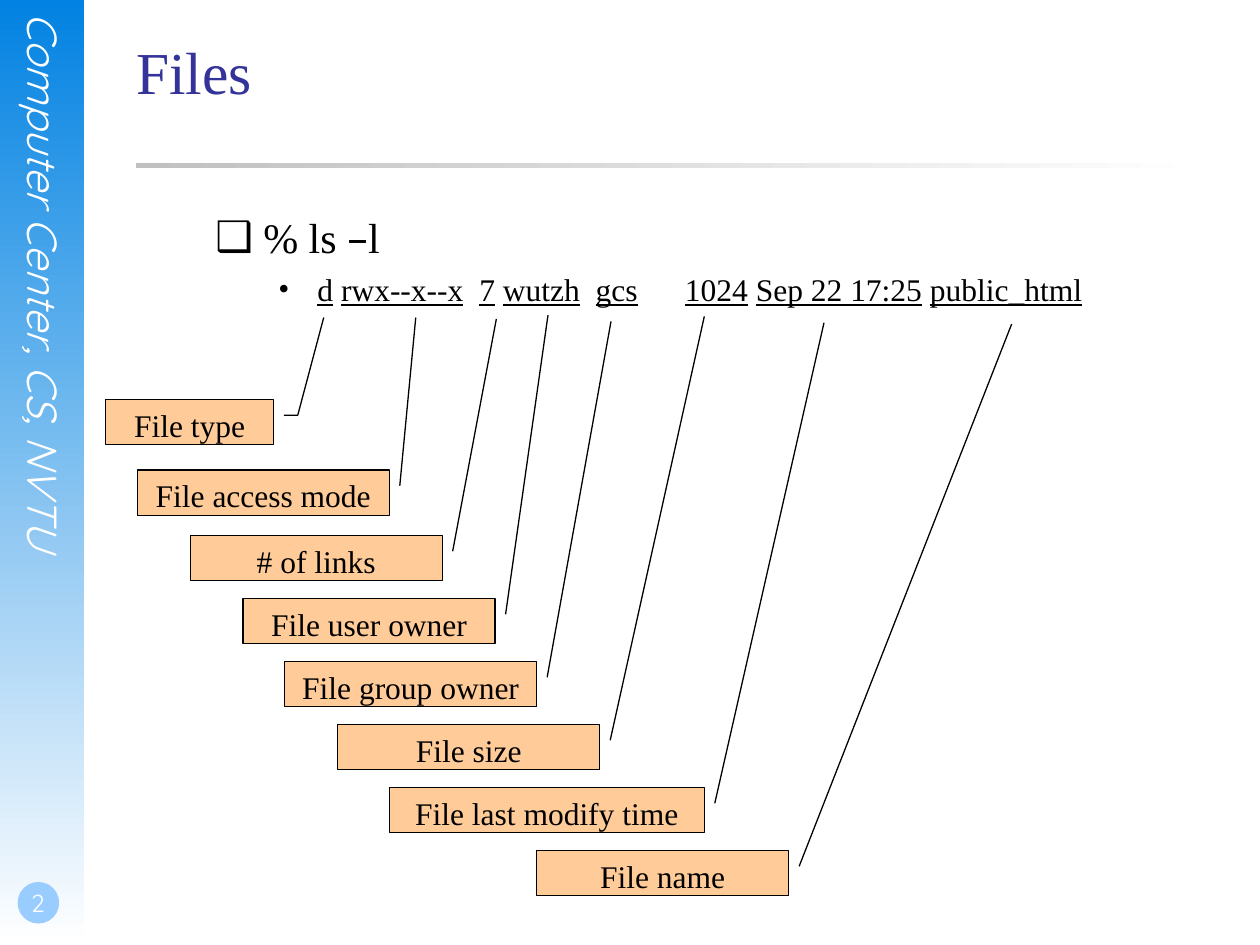
from pptx import Presentation
from pptx.dml.color import RGBColor
from pptx.enum.shapes import MSO_SHAPE
from pptx.enum.text import MSO_ANCHOR, PP_ALIGN
from pptx.oxml.ns import qn
from pptx.util import Inches, Pt
from lxml import etree

SERIF, SANS, SYMBOL = "Times New Roman", "Quicksand", "DejaVu Sans"
BLACK, WHITE = "000000", "FFFFFF"
SPACE_WIDTH = 4.5  # points, one space of the serif font at 18 pt

# Text of each field and the number of spaces that follow it
LISTING = [("d", 1), ("rwx--x--x", 2), ("7", 1), ("wutzh", 2), ("gcs", 6),
           ("1024", 1), ("Sep 22 17:25", 1), ("public_html", 0)]

# Label, left, top, width, then the x and y of the tip of its line
CALLOUTS = [
    ("File type", 0.84, 3.17, 1.33, 2.57, 2.52),
    ("File access mode", 1.09, 3.73, 2, 3.3, 2.52),
    ("# of links", 1.51, 4.25, 2, 3.94, 2.53),
    ("File user owner", 1.93, 4.75, 2, 4.35, 2.5),
    ("File group owner", 2.26, 5.25, 2, 4.85, 2.55),
    ("File size", 2.68, 5.75, 2.08, 5.59, 2.51),
    ("File last modify time", 3.09, 6.25, 2.5, 6.54, 2.56),
    ("File name", 4.26, 6.75, 2, 8.03, 2.57),
]


def color(value):
    return RGBColor.from_string(value)


def inches(*lengths):
    return [Inches(length) for length in lengths]


def add_run(paragraph, text, size=18, font=SERIF, fill=BLACK,
            italic=None, underline=None):
    run = paragraph.add_run()
    run.text = text
    run.font.size = Pt(size)
    run.font.name = font
    run.font.color.rgb = color(fill)
    run.font.italic = italic
    run.font.underline = underline
    return run


def set_frame(frame, insets=(0, 0, 0, 0), anchor=MSO_ANCHOR.TOP):
    frame.word_wrap = True
    frame.vertical_anchor = anchor
    (frame.margin_left, frame.margin_top,
     frame.margin_right, frame.margin_bottom) = inches(*insets)


def add_text_box(slide, box, **frame_format):
    frame = slide.shapes.add_textbox(*inches(*box)).text_frame
    set_frame(frame, **frame_format)
    return frame


def add_block(slide, kind, box, fill):
    """Add a shape without outline; a pair of colours gives a gradient."""
    shape = slide.shapes.add_shape(kind, *inches(*box))
    shape.shadow.inherit = False
    shape.line.fill.background()
    if isinstance(fill, str):
        shape.fill.solid()
        shape.fill.fore_color.rgb = color(fill)
    else:
        shape.fill.gradient()
        for stop, value in zip(shape.fill.gradient_stops, fill):
            stop.color.rgb = color(value)
    return shape


def set_bullet(paragraph, character, font, left, hanging):
    properties = paragraph._p.get_or_add_pPr()
    properties.set("marL", str(Inches(left)))
    properties.set("indent", str(-Inches(hanging)))
    etree.SubElement(properties, qn("a:buFont")).set("typeface", font)
    etree.SubElement(properties, qn("a:buChar")).set("char", character)


def add_sidebar(slide, left, top, width, height):
    band = add_block(slide, MSO_SHAPE.RECTANGLE, (left, top, width, height),
                     ("0282E2", WHITE))
    band.fill.gradient_angle = 270
    name = add_text_box(slide, (left + 0.15, top + 0.1, 0.4, 5.11))
    name._txBody.bodyPr.set("vert", "eaVert")
    add_run(name.paragraphs[0], "Computer Center, CS, NVTU", size=24,
            font=SANS, fill=WHITE, italic=True)

    bottom = top + height
    add_block(slide, MSO_SHAPE.OVAL, (left + 0.14, bottom - 0.5, 0.33, 0.33), "99CCFF")
    number = add_text_box(slide, (left, bottom - 0.67, 0.58, 0.5),
                          insets=(0.02, 0, 0, 0.05), anchor=MSO_ANCHOR.BOTTOM)
    number.paragraphs[0].alignment = PP_ALIGN.CENTER
    add_run(number.paragraphs[0], "2", size=14, font=SANS, fill=WHITE)


def add_title(slide, left, top, width, height):
    """Place the title and the fading rule below it."""
    rule = add_block(slide, MSO_SHAPE.RECTANGLE, (left, top + 1.01, width, 0.04),
                     ("C0C0C0", WHITE))
    rule.fill.gradient_angle = 0
    title = slide.shapes.title
    title.left, title.top, title.width, title.height = inches(left, top, width, height)
    set_frame(title.text_frame)
    paragraph = title.text_frame.paragraphs[0]
    paragraph.alignment = PP_ALIGN.LEFT
    add_run(paragraph, "Files", size=34, fill="333399")


def add_command(slide, *box):
    """Write the command and the line that it prints."""
    frame = add_text_box(slide, box)
    command = frame.paragraphs[0]
    set_bullet(command, "❑", SYMBOL, 0.38, 0.38)
    for text, font in (("% ls ", SERIF), ("–", SYMBOL), ("l", SERIF)):
        add_run(command, text, size=24, font=font)

    listing = frame.add_paragraph()
    listing.level = 1
    listing.space_before = Pt(4.5)
    set_bullet(listing, "•", SERIF, 0.81, 0.31)
    for text, spaces in LISTING:
        add_run(listing, text, underline=True)
        if spaces:
            gap = add_run(listing, " ", underline=False)
            extra = (spaces - 1) * SPACE_WIDTH
            gap.font._element.set("spc", str(round(extra * 100)))


def add_callout(slide, label, left, top, width, tip_x, tip_y, knee=0):
    """Add a label whose line starts beside it, runs level for knee, then to the tip."""
    height, gap = 0.36, 1 / 12
    shape = add_block(slide, MSO_SHAPE.LINE_CALLOUT_2, (left, top, width, height), "FFCC99")
    shape.line.color.rgb = color(BLACK)
    shape.line.width = Pt(0.75)
    start = 1 + gap / width
    points = (0.35, start, 0.35, start + knee / width,
              (tip_y - top) / height, (tip_x - left) / width)
    for index, value in enumerate(points):
        shape.adjustments[index] = value
    set_frame(shape.text_frame, insets=(0.1, 0.05, 0.1, 0.05))
    paragraph = shape.text_frame.paragraphs[0]
    paragraph.alignment = PP_ALIGN.CENTER
    add_run(paragraph, label)


def main():
    presentation = Presentation()
    presentation.slide_width, presentation.slide_height = inches(10, 7.5)
    slide = presentation.slides.add_slide(presentation.slide_layouts[5])
    add_sidebar(slide, 0, 0, 0.67, 7.5)
    add_title(slide, 1.08, 0.28, 8.5, 1.25)
    add_command(slide, 1.71, 1.68, 8.1, 4.67)
    for index, callout in enumerate(CALLOUTS):
        add_callout(slide, *callout, knee=0 if index else 0.11)
    presentation.save("out.pptx")


if __name__ == "__main__":
    main()
